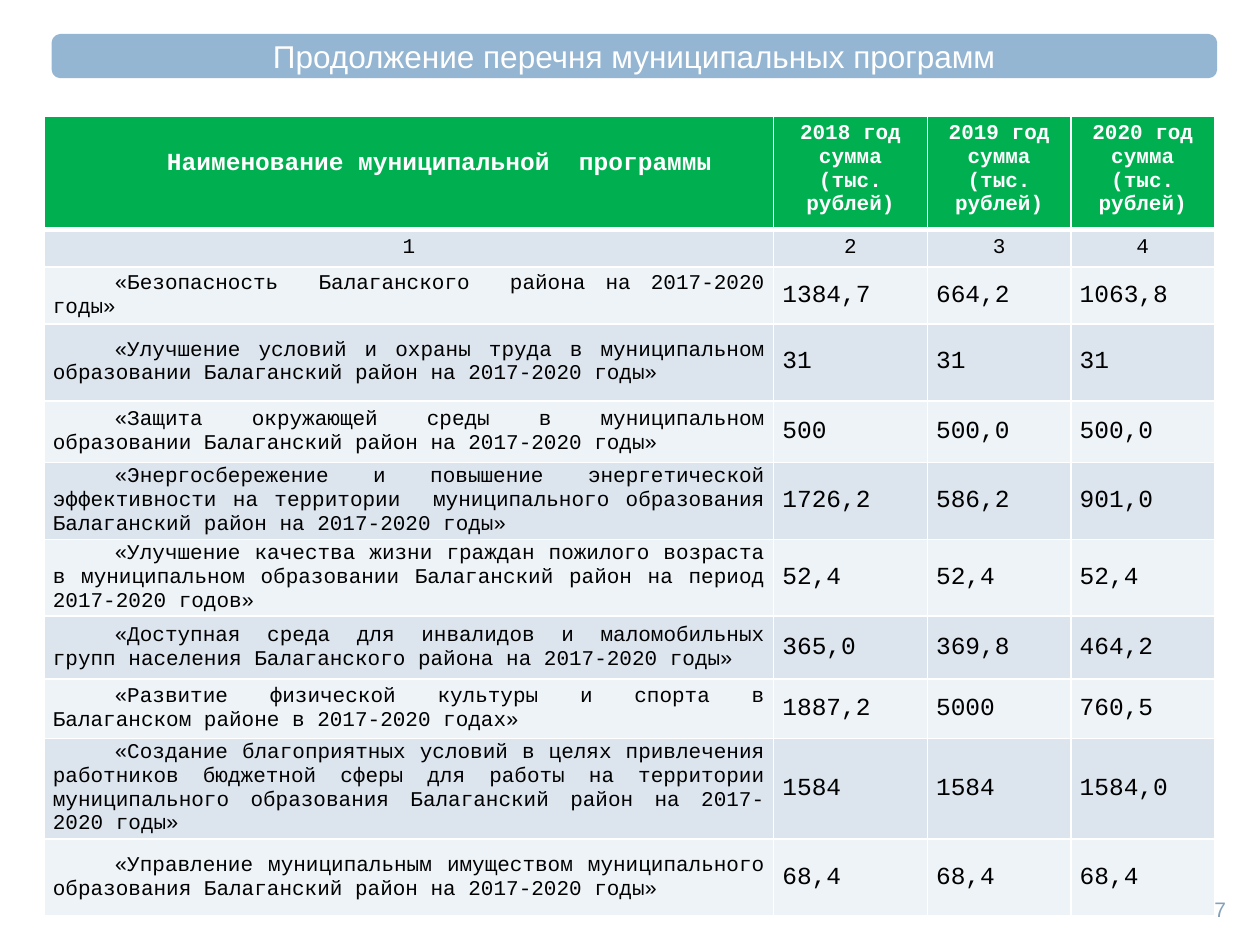
from dataclasses import dataclass
from typing import Any

from pptx import Presentation
from pptx.dml.color import RGBColor
from pptx.enum.shapes import MSO_SHAPE as Shape
from pptx.enum.text import MSO_ANCHOR as Anchor, PP_ALIGN as Align
from pptx.oxml.ns import qn
from pptx.util import Inches, Pt
from lxml.etree import SubElement

COLUMNS = [5.79, 1.22, 1.14, 1.14]
ROWS = [0.89, 0.29, 0.45, 0.61, 0.49, 0.61, 0.61, 0.5, 0.47, 0.8, 0.61]
HEADER = ["Наименование муниципальной  программы"] + [
    f"{year} год сумма\n(тыс.\nрублей)" for year in (2018, 2019, 2020)]
PROGRAMS = [
    ("«Безопасность  Балаганского  района на 2017-2020 годы»",
     "1384,7", "664,2", "1063,8"),
    ("«Улучшение условий и охраны труда в муниципальном образовании "
     "Балаганский район на 2017-2020 годы»", "31", "31", "31"),
    ("«Защита окружающей среды в муниципальном образовании "
     "Балаганский район на 2017-2020 годы»", "500", "500,0", "500,0"),
    ("«Энергосбережение и повышение энергетической эффективности на территории  "
     "муниципального образования Балаганский район на 2017-2020 годы»",
     "1726,2", "586,2", "901,0"),
    ("«Улучшение качества жизни граждан пожилого возраста в муниципальном "
     "образовании Балаганский район на период 2017-2020 годов»",
     "52,4", "52,4", "52,4"),
    ("«Доступная среда для инвалидов и маломобильных групп населения "
     "Балаганского района на 2017-2020 годы»", "365,0", "369,8", "464,2"),
    ("«Развитие физической культуры и спорта в Балаганском районе "
     "в 2017-2020 годах»", "1887,2", "5000", "760,5"),
    ("«Создание благоприятных условий в целях привлечения работников бюджетной "
     "сферы для работы на территории муниципального образования "
     "Балаганский район на 2017-2020 годы»", "1584", "1584", "1584,0"),
    ("«Управление муниципальным имуществом муниципального образования "
     "Балаганский район на 2017-2020 годы»", "68,4", "68,4", "68,4"),
]


def color(value):
    return RGBColor.from_string(value)


@dataclass
class Deck:
    s: Any
    font: str = "Arial"
    table_font: str = "Courier New"
    accent: str = "94B6D2"
    muted: str = "83A1B9"
    header: str = "00B050"
    bands: tuple = ("DCE5EE", "EEF3F7")
    white: str = "FFFFFF"
    black: str = "000000"

    def set_text(self, tf, text, size, fill, align, font=None, bold=False, indent=0):
        tf.text = text
        tf.word_wrap = True
        for p in tf.paragraphs:
            p.alignment = align
            if indent:
                p._p.get_or_add_pPr().set("indent", str(Inches(indent)))
            for r in p.runs:
                r.font.name = font or self.font
                r.font.size = Pt(size)
                r.font.bold = bold
                r.font.color.rgb = color(fill)

    def page_number(self, text, *box):
        tf = self.s.shapes.add_textbox(*map(Inches, box)).text_frame
        self.set_text(tf, text, 12, self.muted, Align.RIGHT)
        tf.vertical_anchor = Anchor.MIDDLE

    def title(self, text, *box):
        sp = self.s.shapes.add_shape(Shape.ROUNDED_RECTANGLE, *map(Inches, box))
        sp.shadow.inherit = False
        sp.fill.solid()
        sp.fill.fore_color.rgb = color(self.accent)
        sp.line.color.rgb = color(self.accent)
        sp.line.width = Pt(3)
        self.set_text(sp.text_frame, text, 18, self.white, Align.CENTER)
        sp.text_frame.vertical_anchor = Anchor.MIDDLE

    def borders(self, cell, bottom):
        tc_pr = cell._tc.get_or_add_tcPr()
        for side, width in (("L", 1), ("R", 1), ("T", 1), ("B", bottom)):
            ln = SubElement(tc_pr, qn(f"a:ln{side}"), w=str(Pt(width)))
            fill = SubElement(ln, qn("a:solidFill"))
            SubElement(fill, qn("a:srgbClr"), val=self.white)

    def cell(self, cell, text, row, col):
        cell.margin_left = cell.margin_right = Inches(0.07)
        self.borders(cell, 3 if row == 0 else 1)
        cell.fill.solid()
        cell.fill.fore_color.rgb = color(
            self.bands[(row - 1) % 2] if row else self.header)
        size, indent = 12, 0.49 if col == 0 and row != 1 else 0
        if row < 2:
            align = Align.CENTER
            if row == col == 0:
                size = 14
                cell.margin_top = Inches(0.27)
        else:
            align = Align.JUSTIFY
            size = 14 if col else 12
            cell.margin_top = cell.margin_bottom = 0
            cell.vertical_anchor = Anchor.MIDDLE
        self.set_text(cell.text_frame, text, size, self.black if row else self.white,
                      align, self.table_font, row == 0, indent)

    def table(self, left, top, widths, heights, data):
        box = map(Inches, (left, top, sum(widths), sum(heights)))
        table = self.s.shapes.add_table(len(heights), len(widths), *box).table
        for column, width in zip(table.columns, widths):
            column.width = Inches(width)
        for row, height in zip(table.rows, heights):
            row.height = Inches(height)
        for i, values in enumerate(data):
            for j, text in enumerate(values):
                self.cell(table.cell(i, j), text, i, j)


def main():
    prs = Presentation()
    prs.slide_width, prs.slide_height = Inches(10), Inches(7.5)
    deck = Deck(prs.slides.add_slide(prs.slide_layouts[6]))

    # Page number, partly under the table
    deck.page_number("17", 9, 7.08, 0.83, 0.27)
    # Title bar
    deck.title("Продолжение перечня муниципальных программ", 0.43, 0.29, 9.21, 0.31)
    # Programmes and their yearly sums
    deck.table(0.35, 0.92, COLUMNS, ROWS, [HEADER, "1234", *PROGRAMS])

    prs.save("out.pptx")


if __name__ == "__main__":
    main()
